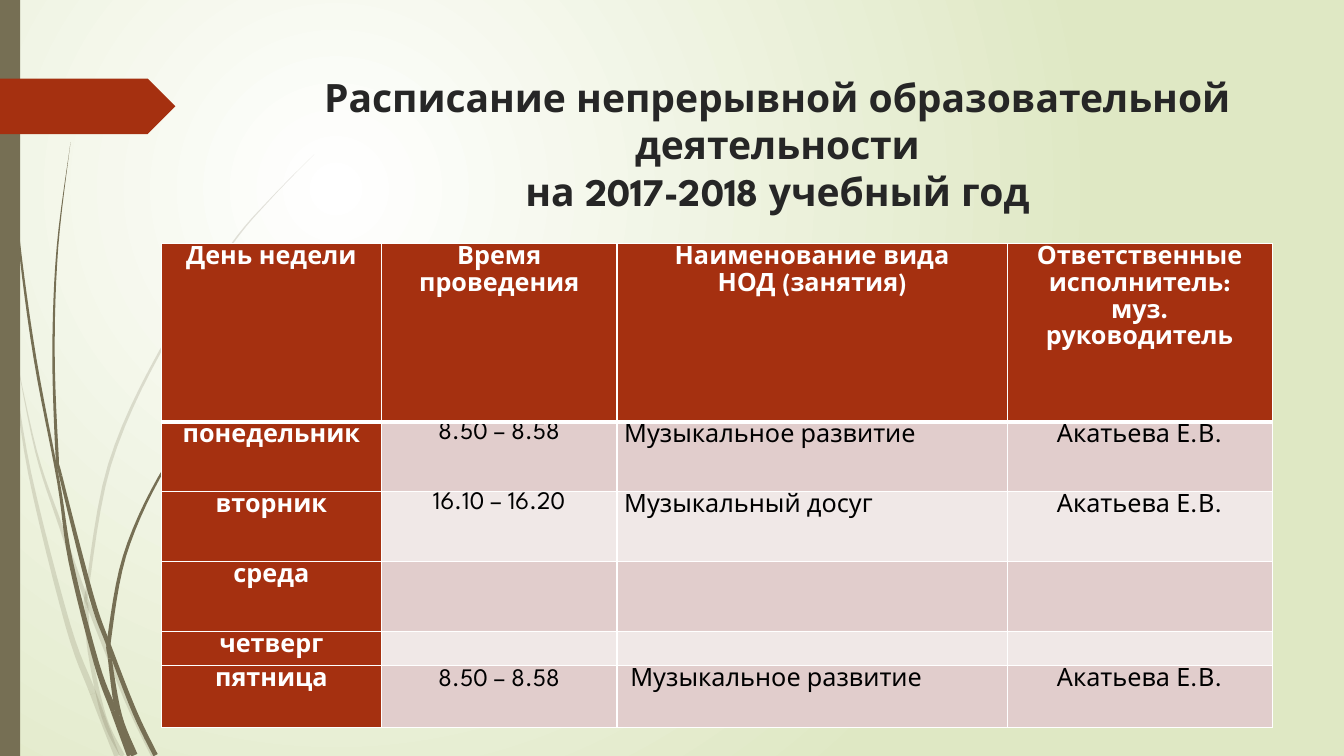
from math import hypot

from lxml import etree
from pptx import Presentation
from pptx.dml.color import RGBColor
from pptx.enum.shapes import MSO_SHAPE
from pptx.enum.text import MSO_ANCHOR, PP_ALIGN
from pptx.oxml import parse_xml
from pptx.oxml.ns import qn
from pptx.util import Cm, Pt

CENTER, LEFT = PP_ALIGN.CENTER, PP_ALIGN.LEFT
TOP = MSO_ANCHOR.TOP
RECT, PENTAGON = MSO_SHAPE.RECTANGLE, MSO_SHAPE.PENTAGON
FONT = "League Spartan"
COLORS = {
    "white": "FFFFFF", "black": "000000", "title": "262626",
    "olive": "766F54", "red": "A53010", "meadow": "DFE8C4",
    "band_dark": "E1CDCC", "band_light": "F0E8E7",
}
BACKGROUND = """<p:bg
 xmlns:p="http://schemas.openxmlformats.org/presentationml/2006/main"
 xmlns:a="http://schemas.openxmlformats.org/drawingml/2006/main">
<p:bgPr><a:gradFill rotWithShape="1"><a:gsLst>
<a:gs pos="0"><a:srgbClr val="{white}"/></a:gs>
<a:gs pos="100000"><a:srgbClr val="{meadow}"/></a:gs></a:gsLst>
<a:path path="circle"><a:fillToRect l="50000" t="50000" r="100000" b="100000"/>
</a:path></a:gradFill><a:effectLst/></p:bgPr></p:bg>"""

STEPS = 6
PALE_BLADES = [
    ([3], [(0.36, 8.76, 0), (0.91, 11.38, 0.05), (1.52, 13.23, 0.09), (2.16, 15.06, 0.1),
           (3.18, 17.6, 0.12), (3.87, 19.05, 0.12)]),
    ([1, 4], [(0, 7.37, 0.1), (0.28, 8.89, 0.03), (0.75, 11.93, 0.08), (1.71, 15.75, 0.13),
              (2.35, 17.48, 0.16), (2.95, 19.05, 0.14)]),
    ([5, 6, 8], [(7.92, 3.89, 0), (6.81, 5.02, 0.02), (5.8, 6.21, 0.04), (4.04, 8.85, 0.06),
                 (2.76, 11.72, 0.08), (2.2, 14.83, 0.08), (2.18, 15.3, 0.1),
                 (2.26, 16.41, 0.1), (2.62, 18.06, 0.12), (3.09, 19.05, 0.12)]),
]
DARK_BLADES = [
    ([4, 7], [(0.09, 0, 0.03), (0.19, 2.79, 0.03), (0.46, 5.92, 0.05), (0.88, 9.02, 0.07),
              (1.47, 12.12, 0.07), (1.78, 14.14, 0.11), (2.43, 16.71, 0.13),
              (2.87, 17.91, 0.16), (3.3, 19.03, 0.2)]),
    ([4, 6], [(1.78, 3.58, 0), (1.45, 6.22, 0.04), (1.35, 8.86, 0.06), (1.44, 11.46, 0.08),
              (1.53, 11.99, 0.08), (2.3, 15.01, 0.12), (2.74, 16.26, 0.11),
              (3.4, 17.96, 0.12), (3.92, 19.03, 0.12)]),
    ([4, 5, 6], [(6.6, 8.74, 0), (5.19, 10.3, 0.04), (3.99, 12.07, 0.06), (3.14, 14.01, 0.08),
                 (2.76, 16.05, 0.1), (2.77, 16.59, 0.1), (3, 18.03, 0.15),
                 (3.39, 19.03, 0.16)]),
]

COLUMNS = [5.54, 5.94, 9.83, 6.68]
ROWS = [4.49, 1.76, 1.76, 1.76, 0.85, 1.57]
TEACHER = "Акатьева Е.В."
SCHEDULE = [
    ["День недели", "Время проведения", "Наименование вида\nНОД (занятия)",
     "Ответственные\vисполнитель:\vмуз.\vруководитель"],
    ["понедельник", "8.50 – 8.58", "Музыкальное развитие", TEACHER],
    ["вторник", "16.10 – 16.20", "Музыкальный досуг", TEACHER],
    ["среда", "", "", ""],
    ["четверг", "", "", ""],
    ["пятница", "8.50 – 8.58", " Музыкальное развитие", TEACHER],
]
SINGLE_SPACED = {(1, 1), (2, 1)}


def rgb(name):
    return RGBColor.from_string(COLORS[name])


def paint(sp, color, alpha=None):
    sp.shadow.inherit = False
    sp.line.fill.background()
    sp.fill.solid()
    sp.fill.fore_color.rgb = rgb(color)
    if alpha is not None:
        clr = sp._element.spPr.find(".//" + qn("a:srgbClr"))
        etree.SubElement(clr, qn("a:alpha"), val=str(alpha * 1000))


def add_block(s, kind, x, y, w, h, color):
    sp = s.shapes.add_shape(kind, Cm(x), Cm(y), Cm(w), Cm(h))
    paint(sp, color)


def smooth(nodes):
    padded = [nodes[0], *nodes, nodes[-1]]
    for a, b, c, d in zip(padded, padded[1:], padded[2:], padded[3:]):
        for i in range(STEPS):
            t = i / STEPS
            yield tuple(
                q + t * (r - p + t * (2 * p - 5 * q + 4 * r - u + t * (3 * (q - r) + u - p))) / 2
                for p, q, r, u in zip(a, b, c, d))
    yield nodes[-1]


def add_blade(s, joints, nodes, alpha=None):
    line = list(smooth(nodes))
    left, right = [], []
    for i, (x, y, w) in enumerate(line):
        before, after = line[max(i - 1, 0)], line[min(i + 1, len(line) - 1)]
        dx, dy = after[0] - before[0], after[1] - before[1]
        k = w / 2 / hypot(dx, dy)
        left.append((Cm(x - dy * k), Cm(y + dx * k)))
        right.append((Cm(x + dy * k), Cm(y - dx * k)))
    ends = [0, *joints, len(nodes) - 1]
    for start, end in zip(ends, ends[1:]):
        part = slice(start * STEPS, end * STEPS + 1)
        outline = left[part] + right[part][::-1]
        builder = s.shapes.build_freeform(*outline[0])
        builder.add_line_segments(outline[1:], close=True)
        paint(builder.convert_to_shape(), "olive", alpha)


def style_paragraph(p, size, color, bold, align, spacing):
    p.alignment = align
    p.line_spacing = spacing
    p.font.name = FONT
    p.font.size = Pt(size)
    p.font.bold = bold
    p.font.color.rgb = rgb(color)


def add_title(s, text):
    sp = s.shapes.title
    sp.left, sp.top, sp.width, sp.height = Cm(7.21), Cm(1.73), Cm(24.77), Cm(3.56)
    tf = sp.text_frame
    tf.word_wrap = True
    tf.vertical_anchor = TOP
    tf.text = text
    style_paragraph(tf.paragraphs[0], 27.9, "title", True, CENTER, 1.0)


def add_borders(cell, widths):
    tcPr = cell._tc.get_or_add_tcPr()
    for i, (side, width) in enumerate(zip("LRTB", widths)):
        ln = etree.Element(qn("a:ln" + side), w=str(Pt(width)))
        fill = etree.SubElement(ln, qn("a:solidFill"))
        etree.SubElement(fill, qn("a:srgbClr"), val=COLORS["white"])
        tcPr.insert(i, ln)


def fill_cell(cell, row, col, text):
    heading = row == 0 or col == 0
    band = "band_dark" if row % 2 else "band_light"
    cell.fill.solid()
    cell.fill.fore_color.rgb = rgb("red" if heading else band)
    add_borders(cell, (1, 1, 3 if row == 1 else 1, 3 if row == 0 else 1))
    cell.margin_left = cell.margin_right = Cm(0.18)
    cell.margin_top = cell.margin_bottom = Cm(0)
    cell.text = text
    align = LEFT if col == 2 and not heading else CENTER
    spacing = 1.0 if (row, col) in SINGLE_SPACED else 1.15
    for p in cell.text_frame.paragraphs:
        style_paragraph(p, 18, "white" if heading else "black", heading, align, spacing)


def add_schedule(s):
    frame = s.shapes.add_table(len(ROWS), len(COLUMNS), Cm(4.07), Cm(6.14),
                               Cm(sum(COLUMNS)), Cm(sum(ROWS)))
    table = frame.table
    for column, width in zip(table.columns, COLUMNS):
        column.width = Cm(width)
    for row, height in zip(table.rows, ROWS):
        row.height = Cm(height)
    for r, texts in enumerate(SCHEDULE):
        for c, text in enumerate(texts):
            fill_cell(table.cell(r, c), r, c, text)


def main():
    prs = Presentation()
    prs.slide_width, prs.slide_height = Cm(33.87), Cm(19.05)
    s = prs.slides.add_slide(prs.slide_layouts[5])
    s._element.cSld.insert(0, parse_xml(BACKGROUND.format(**COLORS)))
    for joints, nodes in PALE_BLADES:
        add_blade(s, joints, nodes, alpha=20)
    for joints, nodes in DARK_BLADES:
        add_blade(s, joints, nodes)
    add_block(s, RECT, 0, 0, 0.51, 19.05, "olive")
    add_block(s, PENTAGON, 0, 1.98, 4.42, 1.4, "red")
    add_title(s, "Расписание непрерывной образовательной деятельности\vна 2017-2018 учебный год")
    add_schedule(s)
    prs.save("out.pptx")


if __name__ == "__main__":
    main()
